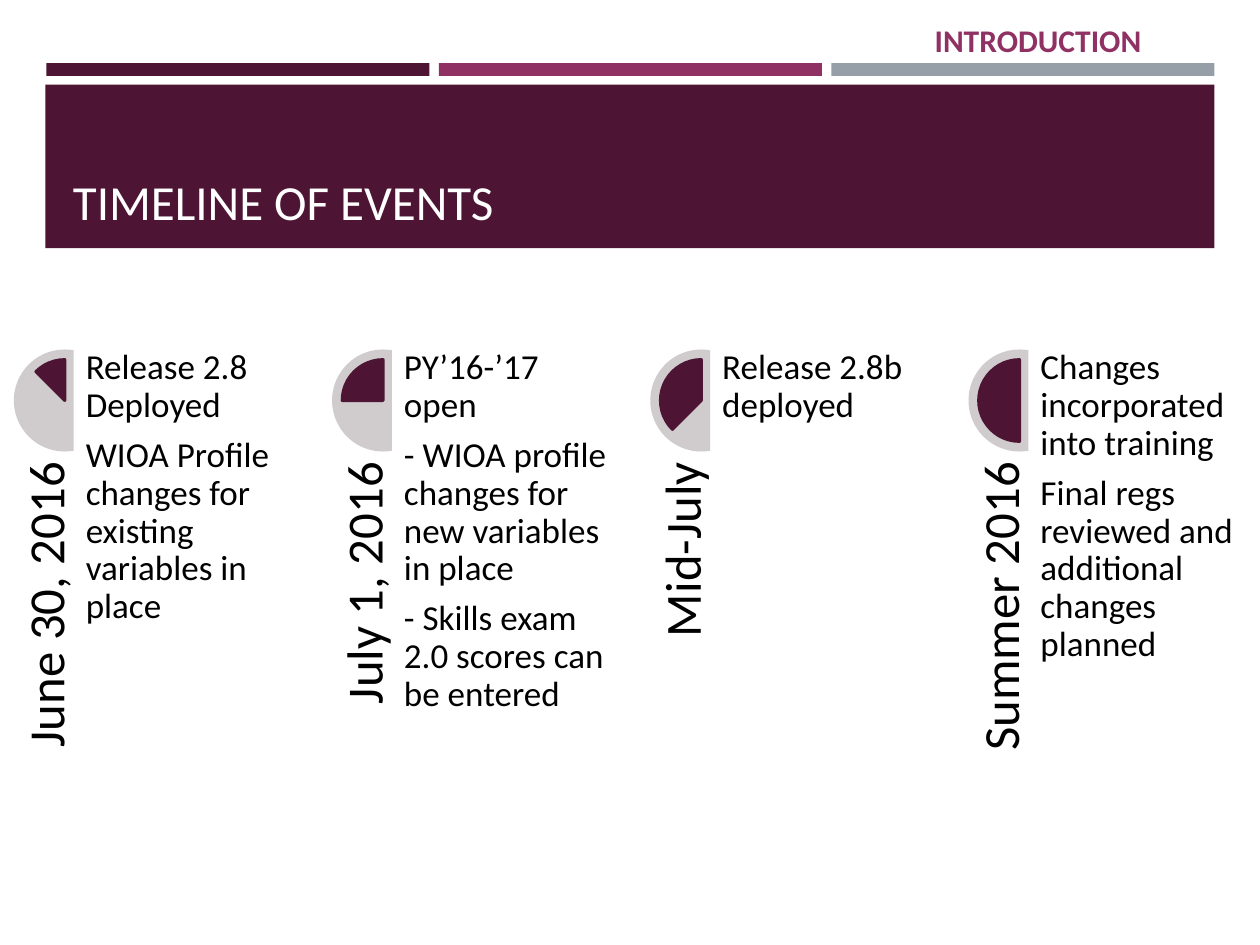
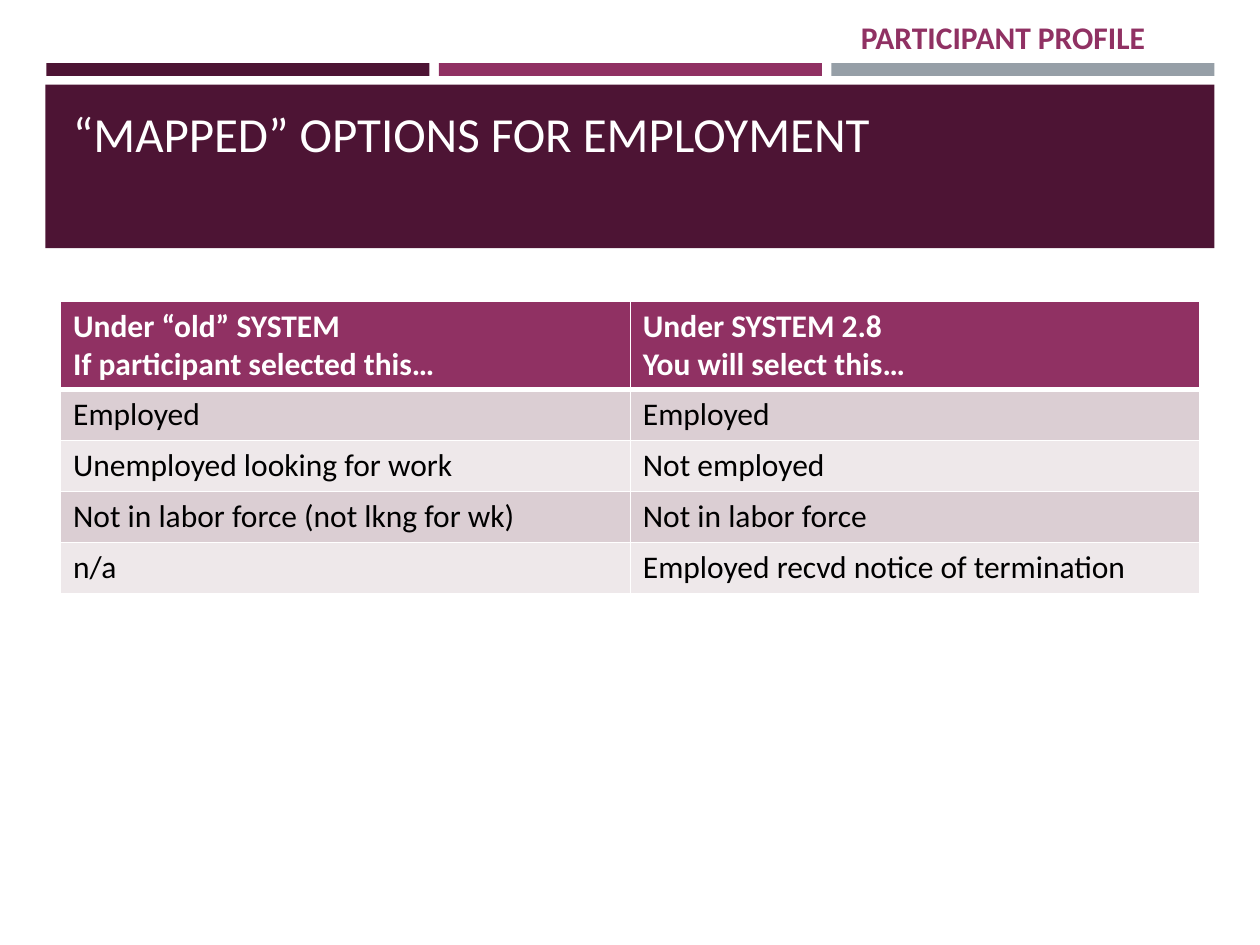
"""Build a timeline slide and an employment mapping table slide."""
from lxml import etree
from pptx import Presentation
from pptx.dml.color import RGBColor
from pptx.enum.shapes import MSO_SHAPE as Shape
from pptx.enum.text import MSO_ANCHOR as Anchor, PP_ALIGN as Align
from pptx.oxml.ns import qn
from pptx.util import Pt

FONT = "Calibri"
PLUM, MAGENTA, GRAY = "4D1434", "903163", "969FA7"
WHITE, BLACK, DISC = "FFFFFF", "000000", "D0CCCE"
ROW_FILLS = ["DBCED3", "EEE8EA"]

TIMELINE = [
    ("June 30, 2016", ["Release 2.8 Deployed",
                       "WIOA Profile changes for existing variables in place"]),
    ("July 1, 2016", ["PY’16-’17 open",
                      "- WIOA profile changes for new variables in place",
                      "- Skills exam 2.0 scores can be entered"]),
    ("Mid-July", ["Release 2.8b deployed"]),
    ("Summer 2016", ["Changes incorporated into training",
                     "Final regs reviewed and additional changes planned"]),
]
EMPLOYMENT = [
    ("Under “old” SYSTEM\nIf participant selected this…",
     "Under SYSTEM 2.8\nYou will select this…"),
    ("Employed", "Employed"),
    ("Unemployed looking for work", "Not employed"),
    ("Not in labor force (not lkng for wk)", "Not in labor force"),
    ("n/a", "Employed recvd notice of termination"),
]


def color(value):
    return RGBColor.from_string(value)


def points(*values):
    return [Pt(value) for value in values]


def write(text_frame, text, size, text_color, bold=False, align=Align.LEFT):
    text_frame.text = text
    for paragraph in text_frame.paragraphs:
        paragraph.alignment = align
        for run in paragraph.runs:
            run.font.name = FONT
            run.font.size = Pt(size)
            run.font.bold = bold
            run.font.color.rgb = color(text_color)


def add_text(slide, box, text, size, text_color, bold=False,
             align=Align.LEFT, anchor=Anchor.TOP):
    shape = slide.shapes.add_textbox(*points(*box))
    shape.text_frame.word_wrap = True
    shape.text_frame.vertical_anchor = anchor
    write(shape.text_frame, text, size, text_color, bold, align)
    return shape


def add_filled(slide, kind, box, fill, angles=(), line_width=0):
    shape = slide.shapes.add_shape(kind, *points(*box))
    shape.shadow.inherit = False
    shape.fill.solid()
    shape.fill.fore_color.rgb = color(fill)
    if line_width:
        shape.line.color.rgb = color(fill)
        shape.line.width = Pt(line_width)
    else:
        shape.line.fill.background()
    for index, degrees in enumerate(angles):
        shape.adjustments[index] = degrees * 0.6
    return shape


def add_framed_slide(presentation, title, title_anchor, section, section_box):
    slide = presentation.slides.add_slide(presentation.slide_layouts[6])
    for index, fill in enumerate([PLUM, MAGENTA, GRAY]):
        add_filled(slide, Shape.RECTANGLE, (26.5 + index * 224.3, 36, 218.9, 7.4), fill)
    add_filled(slide, Shape.RECTANGLE, (26, 48.4, 668, 93.4), PLUM)
    add_text(slide, (34.6, 55.4, 651.6, 80), title, 28, WHITE, anchor=title_anchor)
    add_text(slide, section_box, section, 18, MAGENTA, bold=True)
    return slide


def tighten(shape, space_after):
    frame = shape.text_frame
    frame.margin_left = frame.margin_right = frame.margin_top = frame.margin_bottom = 0
    for paragraph in frame.paragraphs:
        paragraph.line_spacing = 0.9
        paragraph.space_after = Pt(space_after)


def add_timeline(slide):
    top, pitch, disc_size, pie_size = 199.7, 181.85, 58.3, 46.7
    inset = (disc_size - pie_size) / 2
    for index, (date, events) in enumerate(TIMELINE):
        left = 7.9 + index * pitch
        add_filled(slide, Shape.CHORD, (left, top, disc_size, disc_size), DISC, (80, 280))
        start = 270 - 180 * (index + 1) / len(TIMELINE)
        add_filled(slide, Shape.PIE, (left + inset, top + inset, pie_size, pie_size),
                   PLUM, (start, 270), 1.75)
        label = add_text(slide, (left - 67, 331.2, 169.2, 35), date, 29, BLACK,
                         align=Align.RIGHT, anchor=Anchor.BOTTOM)
        label.rotation = 270
        tighten(label, 0)
        details = add_text(slide, (left + 41.1, top, 116.6, 233), "\n".join(events), 20, BLACK)
        tighten(details, 7)


def set_border(cell, side, width):
    properties = cell._tc.get_or_add_tcPr()
    line = etree.Element(qn(f"a:{side}"), w=str(Pt(width)))
    fill = etree.SubElement(line, qn("a:solidFill"))
    etree.SubElement(fill, qn("a:srgbClr"), val=WHITE)
    properties.append(line)


def add_employment_table(slide):
    frame = slide.shapes.add_table(len(EMPLOYMENT), 2, *points(34.6, 172, 651.2, 167))
    table = frame.table
    for row_index, texts in enumerate(EMPLOYMENT):
        header = row_index == 0
        table.rows[row_index].height = Pt(50 if header else 29.2)
        for column_index, text in enumerate(texts):
            cell = table.cell(row_index, column_index)
            write(cell.text_frame, text, 18, WHITE if header else BLACK, bold=header)
            set_border(cell, "lnL", 1)
            set_border(cell, "lnR", 1)
            set_border(cell, "lnT", 3 if row_index == 1 else 1)
            set_border(cell, "lnB", 3 if header else 1)
            cell.fill.solid()
            cell.fill.fore_color.rgb = color(MAGENTA if header else ROW_FILLS[(row_index - 1) % 2])


def main():
    presentation = Presentation()
    presentation.slide_width, presentation.slide_height = points(720, 540)
    timeline_slide = add_framed_slide(presentation, "TIMELINE OF EVENTS", Anchor.BOTTOM,
                                      "INTRODUCTION", (527, 8.2, 171.4, 29))
    add_timeline(timeline_slide)
    employment_slide = add_framed_slide(presentation, "“MAPPED” OPTIONS FOR EMPLOYMENT",
                                        Anchor.TOP, "PARTICIPANT PROFILE",
                                        (484.8, 7, 226, 29))
    add_employment_table(employment_slide)
    presentation.save("out.pptx")


if __name__ == "__main__":
    main()
